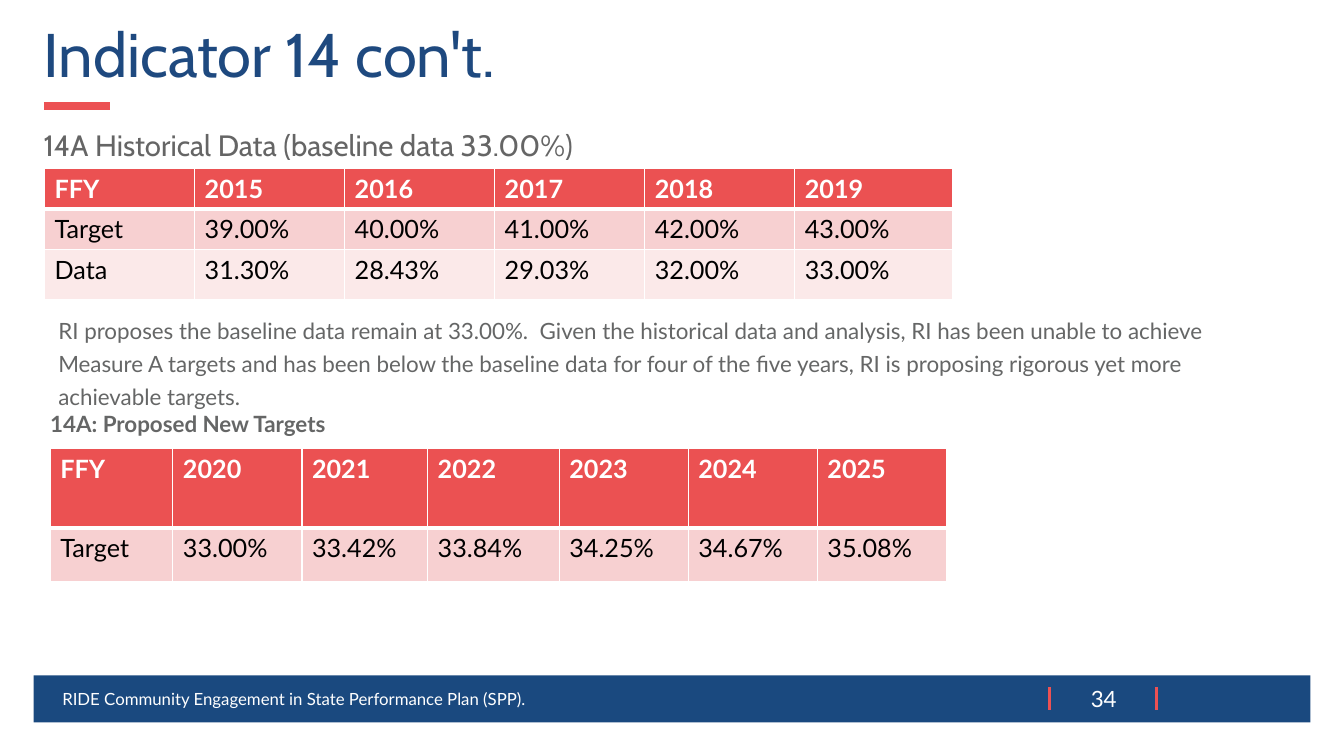
from lxml.etree import SubElement as Sub
from pptx import Presentation
from pptx.dml.color import RGBColor as RGB
from pptx.enum.shapes import MSO_CONNECTOR as Conn, MSO_SHAPE as Shape
from pptx.enum.text import MSO_ANCHOR as Anchor, PP_ALIGN as Align
from pptx.oxml.ns import qn
from pptx.util import Pt

COLORS = {"white": "FFFFFF", "black": "000000", "navy": "1A497F", "title": "1E497F",
          "red": "EC5153", "head": "EB5152", "rose": "F7D0D1", "blush": "FBE9E9",
          "gray": "656565", "note": "656666"}
TITLE = "Indicator 14 con't."
FOOTER = "RIDE Community Engagement in State Performance Plan (SPP)."
PAGE = "34"
HISTORY = "14A Historical Data (baseline data 33.00%)"
TARGETS = "14A: Proposed New Targets"
NOTE = ("RI proposes the baseline data remain at 33.00%.  Given the historical data and analysis, "
        "RI has been unable to achieve Measure A targets and has been below the baseline data "
        "for four of the five years, RI is proposing rigorous yet more achievable targets.")
PAST = [("FFY", "2015", "2016", "2017", "2018", "2019"),
        ("Target", "39.00%", "40.00%", "41.00%", "42.00%", "43.00%"),
        ("Data", "31.30%", "28.43%", "29.03%", "32.00%", "33.00%")]
NEXT = [("FFY", "2020 ", "2021", "2022", "2023", "2024", "2025"),
        ("Target", "33.00%", "33.42%", "33.84%", "34.25%", "34.67%", "35.08%")]
FILLS = ["head", "rose", "blush"]

deck = Presentation()
deck.slide_width, deck.slide_height = Pt(960), Pt(540)
slide = deck.slides.add_slide(deck.slide_layouts[6])
shapes = slide.shapes


def color(name):
    return RGB.from_string(COLORS[name])


def write(frame, text, size=16, font="Lato", ink="white", bold=False, align=Align.LEFT,
          lead=None, after=0):
    frame.word_wrap = True
    para = frame.paragraphs[0]
    para.alignment, para.line_spacing, para.space_after = align, lead, Pt(after)
    run = para.add_run()
    run.text = text
    run.font.size, run.font.name, run.font.bold = Pt(size), font, bold
    run.font.color.rgb = color(ink)


def label(text, box, anchor=Anchor.TOP, **style):
    frame = shapes.add_textbox(*map(Pt, box)).text_frame
    frame.vertical_anchor = anchor
    write(frame, text, **style)


def rule(x1, y1, x2, y2, width):
    line = shapes.add_connector(Conn.STRAIGHT, *map(Pt, (x1, y1, x2, y2)))
    line.line.color.rgb, line.line.width = color("red"), Pt(width)
    Sub(line._element.spPr, qn("a:effectLst"))


def edge(cell, row):
    props = cell._tc.get_or_add_tcPr()
    wide = {"lnB": 3} if row == 0 else {"lnT": 3} if row == 1 else {}
    for side in ("lnL", "lnR", "lnT", "lnB"):
        line = Sub(props, qn("a:" + side), w=str(Pt(wide.get(side, 1))))
        Sub(Sub(line, qn("a:solidFill")), qn("a:srgbClr"), val=COLORS["white"])


def grid(data, left, top, widths, heights):
    table = shapes.add_table(len(data), len(widths), Pt(left), Pt(top),
                             Pt(sum(widths)), Pt(sum(heights))).table
    for col, width in zip(table.columns, widths):
        col.width = Pt(width)
    for r, (line, height) in enumerate(zip(data, heights)):
        table.rows[r].height = Pt(height)
        for c, text in enumerate(line):
            cell = table.cell(r, c)
            edge(cell, r)
            cell.fill.solid()
            cell.fill.fore_color.rgb = color(FILLS[r])
            write(cell.text_frame, text, size=18, bold=r == 0,
                  ink="black" if r else "white")


rule(31.3, 75.6, 78.5, 75.6, 6)
bar = shapes.add_shape(Shape.RECTANGLE, Pt(24), Pt(482.4), Pt(912), Pt(33.6))
bar.shadow.inherit = False
bar.fill.solid()
bar.fill.fore_color.rgb = color("navy")
bar.line.fill.background()
for x in (749.5, 825.8):
    rule(x, 491, x, 507, 2.25)

body = {"lead": 1.23, "after": 6}
label(TITLE, (24, 13.7, 912, 55.4), size=44, font="Cabin", ink="title", lead=0.9)
label(FOOTER, (37.4, 484.6, 610, 28.8), Anchor.MIDDLE, size=12)
label(PAGE, (765.4, 486, 46, 26.6), Anchor.MIDDLE, align=Align.CENTER)
label(HISTORY, (24, 81.4, 912, 67), size=21, font="Cabin", ink="gray", **body)
grid(PAST, 31.8, 120.4, [107.2] * 5 + [113], [28.8, 28.8, 36])
grid(NEXT, 36, 320.4, [87.5, 92.2, 89.8, 94, 92.2, 92.2, 92.5], [56.7, 38.5])
label(TARGETS, (28.8, 285.1, 553.7, 28.8), ink="note", bold=True, **body)
label(NOTE, (34.6, 218.9, 866.9, 112.3), ink="note", **body)

deck.save("out.pptx")
